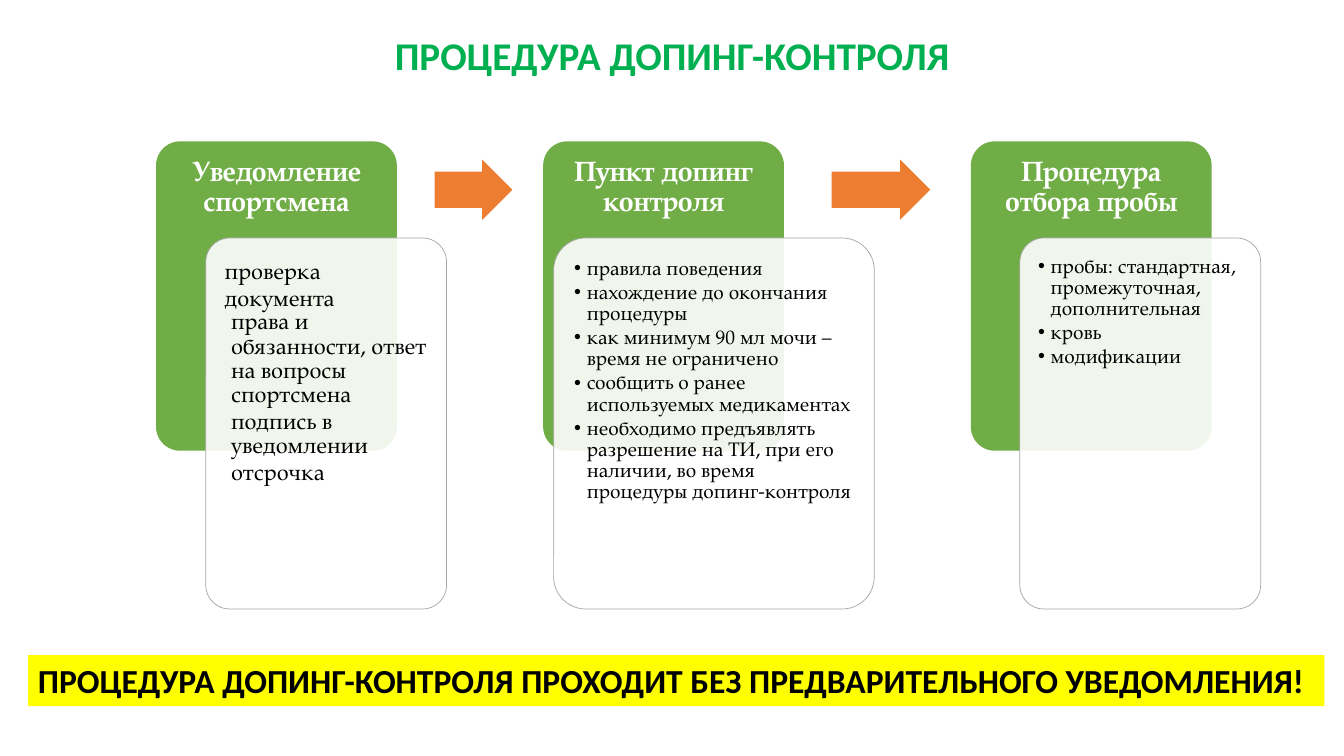
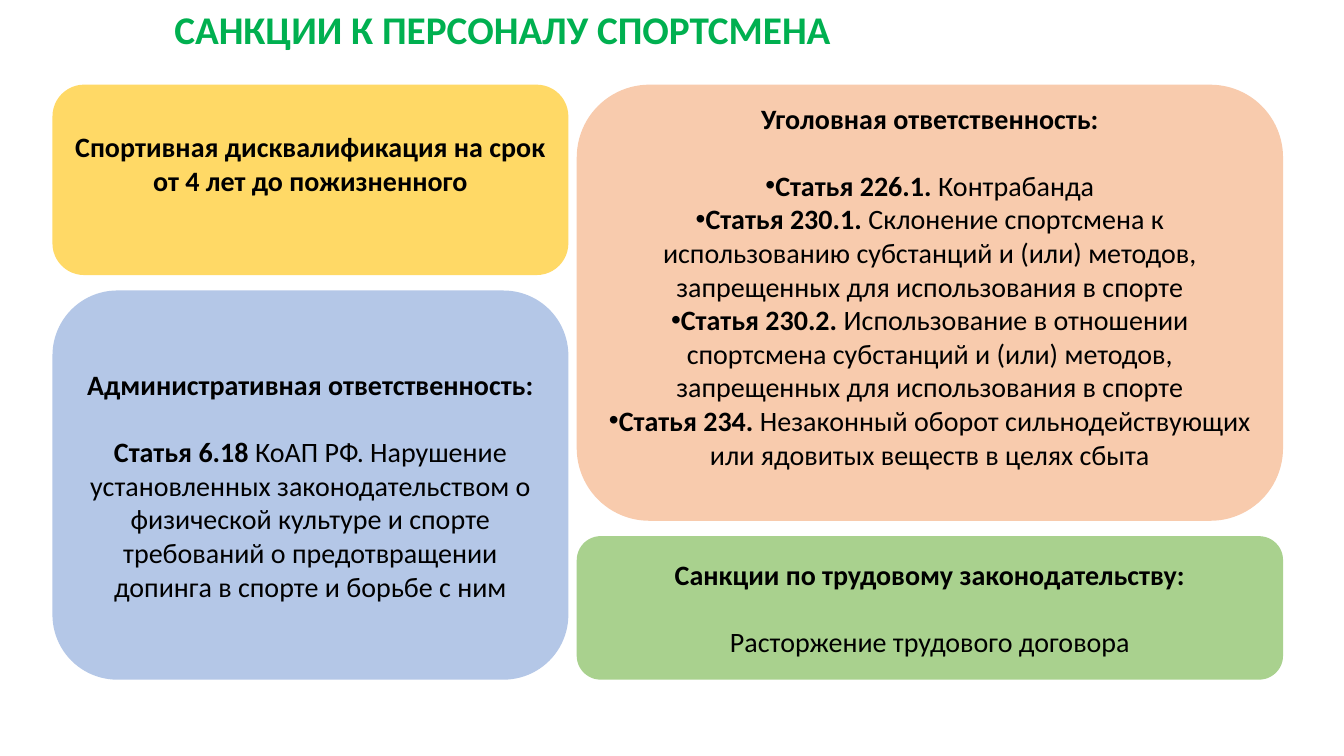
import pptx
import pptx.util
import pptx.dml.color
import pptx.enum.shapes
import pptx.enum.text
import pptx.oxml.ns
import lxml.etree

Pt = pptx.util.Pt
RGB = pptx.dml.color.RGBColor.from_string
SHAPE = pptx.enum.shapes.MSO_SHAPE
ALIGN = pptx.enum.text.PP_ALIGN
ANCHOR = pptx.enum.text.MSO_ANCHOR
qn = pptx.oxml.ns.qn

THEME = {
    "sans": "Calibri", "serif": "TeX Gyre Pagella",
    "title": "00B050", "text": "000000", "white": "FFFFFF",
    "card": "70AD47", "arrow": "ED7D31", "outline": "A5A5A5", "banner": "FFFF00",
    "gold": "FFD966", "peach": "F8CBAD", "blue": "B4C7E7", "green": "A9D18E",
    "title_size": 28, "banner_size": 24, "head_size": 20, "panel_size": 20,
}


def add_box(s, kind, at, fill=None, insets=(7.2, 3.6, 7.2, 3.6), anchor=ANCHOR.MIDDLE):
    at = [Pt(v) for v in at]
    if kind is None:
        sp = s.shapes.add_textbox(*at)
    else:
        sp = s.shapes.add_shape(kind, *at)
        sp.shadow.inherit = False
        sp.fill.solid()
        sp.fill.fore_color.rgb = RGB(fill)
        sp.line.fill.background()
    tf = sp.text_frame
    sides = ("margin_left", "margin_top", "margin_right", "margin_bottom")
    fmt = {"word_wrap": True, "vertical_anchor": anchor}
    fmt.update({side: Pt(v) for side, v in zip(sides, insets)})
    for name, value in fmt.items():
        setattr(tf, name, value)
    return sp


def add_para(tf, runs, size, font, color="text", bullet=False, left=0, hang=0, **fmt):
    p = tf.paragraphs[0] if not tf.paragraphs[0].runs else tf.add_paragraph()
    pPr = p._p.get_or_add_pPr()
    pPr.set("marL", str(Pt(left)))
    pPr.set("indent", str(Pt(-hang)))
    if bullet:
        lxml.etree.SubElement(pPr, qn("a:buFont")).set("typeface", "Arial")
        lxml.etree.SubElement(pPr, qn("a:buChar")).set("char", "•")
    for name, value in fmt.items():
        setattr(p, name, value)
    for text, bold in runs:
        r = p.add_run()
        r.text = text
        for name, value in {"size": Pt(size), "name": THEME[font], "bold": bold}.items():
            setattr(r.font, name, value)
        r.font.color.rgb = RGB(THEME[color])


prs = pptx.Presentation()
prs.slide_width, prs.slide_height = Pt(960), Pt(540)

titles = [
    ("ПРОЦЕДУРА ДОПИНГ-КОНТРОЛЯ", (120, 0, 720, 83), ALIGN.CENTER),
    ("САНКЦИИ К ПЕРСОНАЛУ СПОРТСМЕНА", (117.5, -1.5, 720, 49), ALIGN.LEFT),
]
slides = []
for text, at, align in titles:
    s = prs.slides.add_slide(prs.slide_layouts[6])
    sp = add_box(s, None, at)
    add_para(sp.text_frame, [(text, True)], THEME["title_size"], "sans", "title",
             alignment=align, line_spacing=0.9)
    slides.append(s)

s = slides[0]
card_top, card_w, card_h = 101, 172, 221
detail_top, detail_h = 170, 265
plain = {"left": 4.5, "line_spacing": 0.9, "space_after": Pt(2)}
listed = {"bullet": True, "left": 9, "hang": 9, "line_spacing": 0.9, "space_after": Pt(2)}
cards = [
    ("Уведомление спортсмена", 111.5, 147, 172, 8.5, 16, [
        ("проверка документа", {}),
        ("права и обязанности, ответ на вопросы спортсмена", plain),
        ("подпись в уведомлении", plain),
        ("отсрочка", plain)]),
    ("Пункт допинг контроля", 388, 395.5, 229, 8, 14, [
        ("правила поведения", listed),
        ("нахождение до окончания процедуры", listed),
        ("как минимум 90 мл мочи – время не ограничено", listed),
        ("сообщить о ранее используемых медикаментах", listed),
        ("необходимо предъявлять разрешение на ТИ, при его наличии, "
         "во время процедуры допинг-контроля", listed)]),
    ("Процедура отбора пробы", 693.5, 728.5, 172, 8, 14, [
        ("пробы: стандартная, промежуточная, дополнительная", listed),
        ("кровь", listed),
        ("модификации", listed)]),
]
for head, x, detail_x, detail_w, inset, size, items in cards:
    sp = add_box(s, SHAPE.ROUNDED_RECTANGLE, (x, card_top, card_w, card_h),
                 THEME["card"], (6.5, 6.5, 6.5, 6), ANCHOR.TOP)
    sp.adjustments[0] = 0.1
    add_para(sp.text_frame, [(head, True)], THEME["head_size"], "serif", "white",
             alignment=ALIGN.CENTER, line_spacing=0.9)

    sp = add_box(s, SHAPE.ROUNDED_RECTANGLE, (detail_x, detail_top, detail_w, detail_h),
                 THEME["white"], (inset,) * 4, ANCHOR.TOP)
    sp.adjustments[0] = 0.1
    clr = sp._element.spPr.find(qn("a:solidFill")).find(qn("a:srgbClr"))
    lxml.etree.SubElement(clr, qn("a:alpha")).set("val", "90000")
    sp.line.color.rgb = RGB(THEME["outline"])
    sp.line.width = Pt(0.5)
    for text, fmt in items:
        add_para(sp.text_frame, [(text, False)], size, "serif", alignment=ALIGN.LEFT, **fmt)

for x, w in [(310.5, 55.5), (594, 70.5)]:
    sp = add_box(s, SHAPE.RIGHT_ARROW, (x, 114, w, 43), THEME["arrow"])
    sp.adjustments[0] = 0.6
    sp.adjustments[1] = 0.5

sp = add_box(s, SHAPE.RECTANGLE, (20, 468, 926, 36.5), THEME["banner"], anchor=ANCHOR.TOP)
add_para(sp.text_frame,
         [("ПРОЦЕДУРА ДОПИНГ-КОНТРОЛЯ ПРОХОДИТ БЕЗ ПРЕДВАРИТЕЛЬНОГО УВЕДОМЛЕНИЯ!", True)],
         THEME["banner_size"], "sans", alignment=ALIGN.LEFT)

s = slides[1]
top, gap, line_h = 60.5, 11, 24
after_head = {"space_before": Pt(line_h)}
point = {"bullet": True}
columns = [
    (37.5, 368.5, [
        ("gold", 136, line_h, [
            ([("Спортивная дисквалификация на срок от 4 лет до пожизненного", True)], {})]),
        ("blue", 278, 0, [
            ([("Административная ответственность:", True)], {}),
            ([("Статья 6.18 ", True),
              ("КоАП РФ. Нарушение установленных законодательством о физической культуре "
               "и спорте требований о предотвращении допинга в спорте и борьбе с ним", False)],
             after_head)]),
    ]),
    (412, 504.5, [
        ("peach", 311.5, line_h, [
            ([("Уголовная ответственность:", True)], {}),
            ([("Статья 226.1. ", True), ("Контрабанда", False)], {**point, **after_head}),
            ([("Статья 230.1. ", True),
              ("Склонение спортсмена к использованию субстанций и (или) методов, "
               "запрещенных для использования в спорте", False)], point),
            ([("Статья 230.2. ", True),
              ("Использование в отношении спортсмена субстанций и (или) методов, "
               "запрещенных для использования в спорте", False)], point),
            ([("Статья 234. ", True),
              ("Незаконный оборот сильнодействующих или ядовитых веществ в целях сбыта",
               False)], point)]),
        ("green", 102.5, 0, [
            ([("Санкции по трудовому законодательству:", True)], {}),
            ([("Расторжение трудового договора", False)], after_head)]),
    ]),
]
for x, w, panels in columns:
    y = top
    for fill, h, lift, paras in panels:
        sp = add_box(s, SHAPE.ROUNDED_RECTANGLE, (x, y, w, h), THEME[fill],
                     (7.2, 3.6, 7.2, 3.6 + lift))
        for runs, fmt in paras:
            add_para(sp.text_frame, runs, THEME["panel_size"], "sans",
                     alignment=ALIGN.CENTER, **fmt)
        y += h + gap

prs.save("out.pptx")
